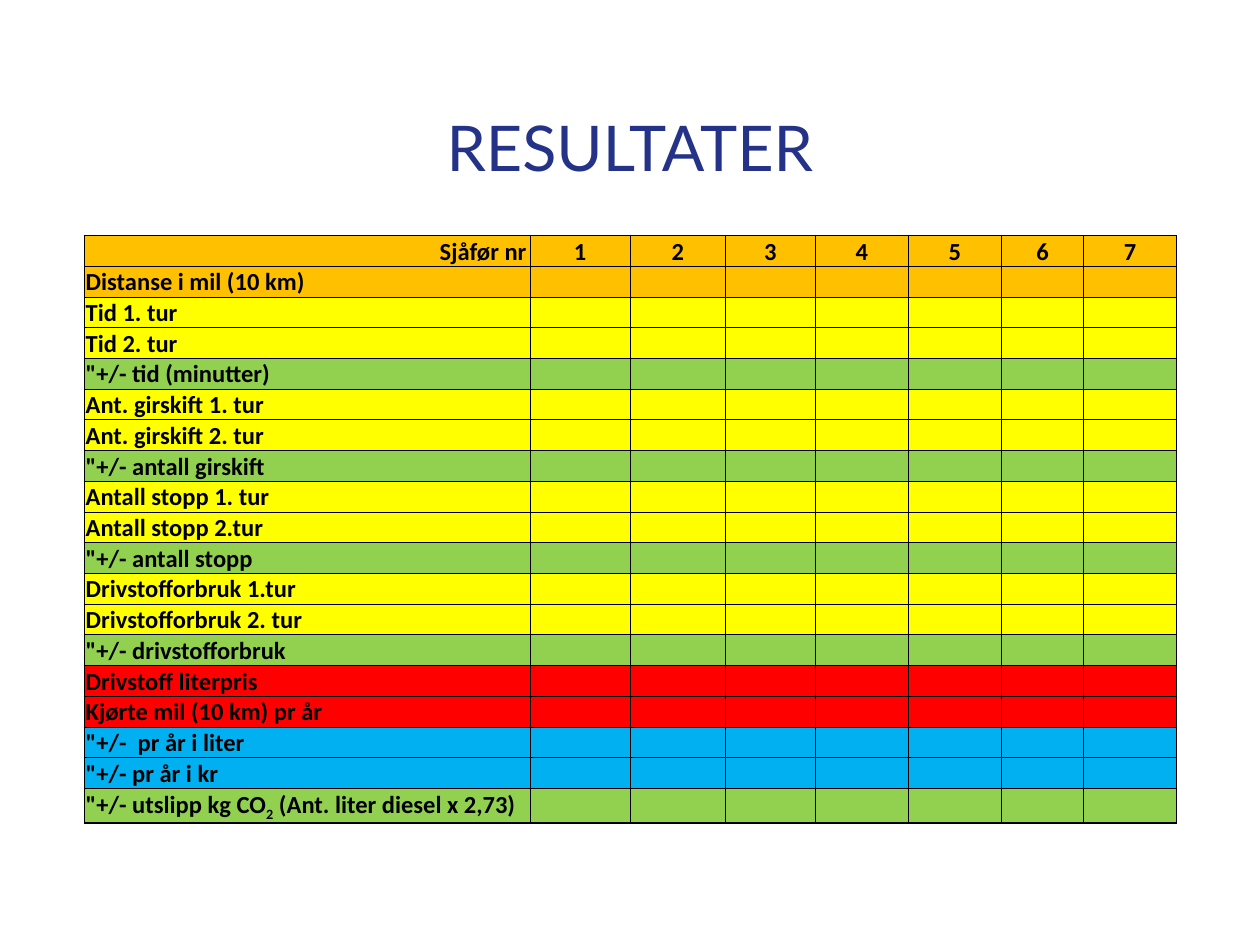
from lxml import etree
from pptx import Presentation
from pptx import util as u
from pptx.dml.color import RGBColor
from pptx.enum import text as t
from pptx.oxml import ns

HUES = {"title": "243388", "ink": "000000", "orange": "FFC000", "yellow": "FFFF00",
        "green": "92D050", "red": "FF0000", "blue": "00B0F0"}
PLAIN = "{2D5ABB26-0587-4C30-8999-92F81FD0307C}"  # no style, no grid
WIDTHS = [2.81, 0.73, 0.79, 0.76, 0.71, 0.74, 0.74, 0.65, 0.74]

# Each band is a colour and its row labels; lines run only between bands.
BANDS = [
    ("orange", [""]),
    ("orange", ["Distanse i mil (10 km)"]),
    ("yellow", ["Tid 1. tur", "Tid 2. tur"]),
    ("green", ['"+/- tid (minutter)']),
    ("yellow", ["Ant. girskift 1. tur", "Ant. girskift 2. tur"]),
    ("green", ['"+/- antall girskift']),
    ("yellow", ["Antall stopp 1. tur", "Antall stopp 2.tur"]),
    ("green", ['"+/- antall stopp']),
    ("yellow", ["Drivstofforbruk 1.tur", "Drivstofforbruk 2. tur"]),
    ("green", ['"+/- drivstofforbruk']),
    ("red", ["Drivstoff literpris", "Kjørte mil (10 km) pr år"]),
    ("blue", ['"+/-  pr år i liter', '"+/- pr år i kr']),
    ("green", [('"+/- utslipp kg CO', "2", " (Ant. liter diesel x 2,73)")]),
]
SPLIT = (0, 2, 3)  # rows whose first two cells stay apart


def rgb(name):
    return RGBColor.from_string(HUES[name])


def write(frame, words, size=14, face="Calibri", hue="ink", bold=False, center=False):
    """Write a string, or a tuple whose second part is a subscript."""
    para = frame.paragraphs[0]
    para.alignment = t.PP_ALIGN.CENTER if center else t.PP_ALIGN.LEFT
    parts = (words,) if isinstance(words, str) else words
    for i, part in enumerate(parts):
        run = para.add_run()
        run.text = part
        font = run.font
        font.size, font.name, font.bold = u.Pt(size), face, bold
        font.color.rgb = rgb(hue)
        if i == 1:
            run._r.get_or_add_rPr().set("baseline", "-25000")


def blank(cell, size=14):
    """Keep an empty cell as low as one line of text."""
    end = etree.SubElement(cell.text_frame.paragraphs[0]._p, ns.qn("a:endParaRPr"))
    end.set("sz", str(size * 100))


def border(cell, sides):
    """Draw lines given as a dict of side to width; call before the fill."""
    props = cell._tc.get_or_add_tcPr()
    for side in "LRTB":
        if side in sides:
            line = etree.SubElement(props, ns.qn("a:ln" + side), w=str(u.Pt(sides[side])))
            solid = etree.SubElement(line, ns.qn("a:solidFill"))
            etree.SubElement(solid, ns.qn("a:srgbClr"), val=HUES["ink"])


def edges(row, col, first, last, rows):
    """Work out which sides of a cell carry a line."""
    end = len(WIDTHS) - 1
    sides = {}
    if col != 1:
        sides["L"] = 0.5 if col else 1
    if col or row not in SPLIT:
        sides["R"] = 1 if col == end else 0.5
    if first:
        sides["T"] = 0.5 if row else 1
    if last:
        sides["B"] = 1 if row == rows - 1 else 0.5
    return sides


def title(slide, left, top, width, height):
    box = slide.shapes.add_textbox(*map(u.Inches, (left, top, width, height)))
    frame = box.text_frame
    frame.word_wrap = True
    frame.margin_left = frame.margin_right = frame.margin_top = frame.margin_bottom = 0
    write(frame, "RESULTATER", size=36, face="Lato", hue="title", center=True)


def results(slide, left, top, width, height):
    lines = [(hue, label, i == 0, i == len(labels) - 1)
             for hue, labels in BANDS for i, label in enumerate(labels)]
    rows = len(lines)
    shape = slide.shapes.add_table(rows, len(WIDTHS), *map(u.Inches, (left, top, width, height)))
    table = shape.table
    table.first_row = table.horz_banding = False
    table._tbl.tblPr.find(ns.qn("a:tableStyleId")).text = PLAIN
    for column, wide in zip(table.columns, WIDTHS):
        column.width = u.Inches(wide)
    head = ["", "Sjåfør nr"] + [str(n) for n in range(1, 8)]
    for row, (hue, label, first, last) in enumerate(lines):
        table.rows[row].height = u.Inches(0.22 if row == rows - 1 else 0.21)
        words = head if row == 0 else [label] + [""] * (len(WIDTHS) - 1)
        for col, word in enumerate(words):
            cell = table.cell(row, col)
            cell.margin_left = cell.margin_right = cell.margin_top = u.Inches(0.01)
            cell.margin_bottom = 0
            cell.vertical_anchor = t.MSO_ANCHOR.BOTTOM
            border(cell, edges(row, col, first, last, rows))
            cell.fill.solid()
            cell.fill.fore_color.rgb = rgb(hue)
            if word:
                write(cell.text_frame, word, bold=True, center=col > 1)
            else:
                blank(cell)
        if row not in SPLIT:
            table.cell(row, 0).merge(table.cell(row, 1))
    shape.height = u.Inches(height)


def main():
    deck = Presentation()
    deck.slide_width, deck.slide_height = u.Inches(10), u.Inches(7.5)
    slide = deck.slides.add_slide(deck.slide_layouts[6])
    title(slide, 0.5, 0.86, 9, 0.85)
    results(slide, 0.67, 1.87, 8.66, 4.63)
    deck.save("out.pptx")


if __name__ == "__main__":
    main()
